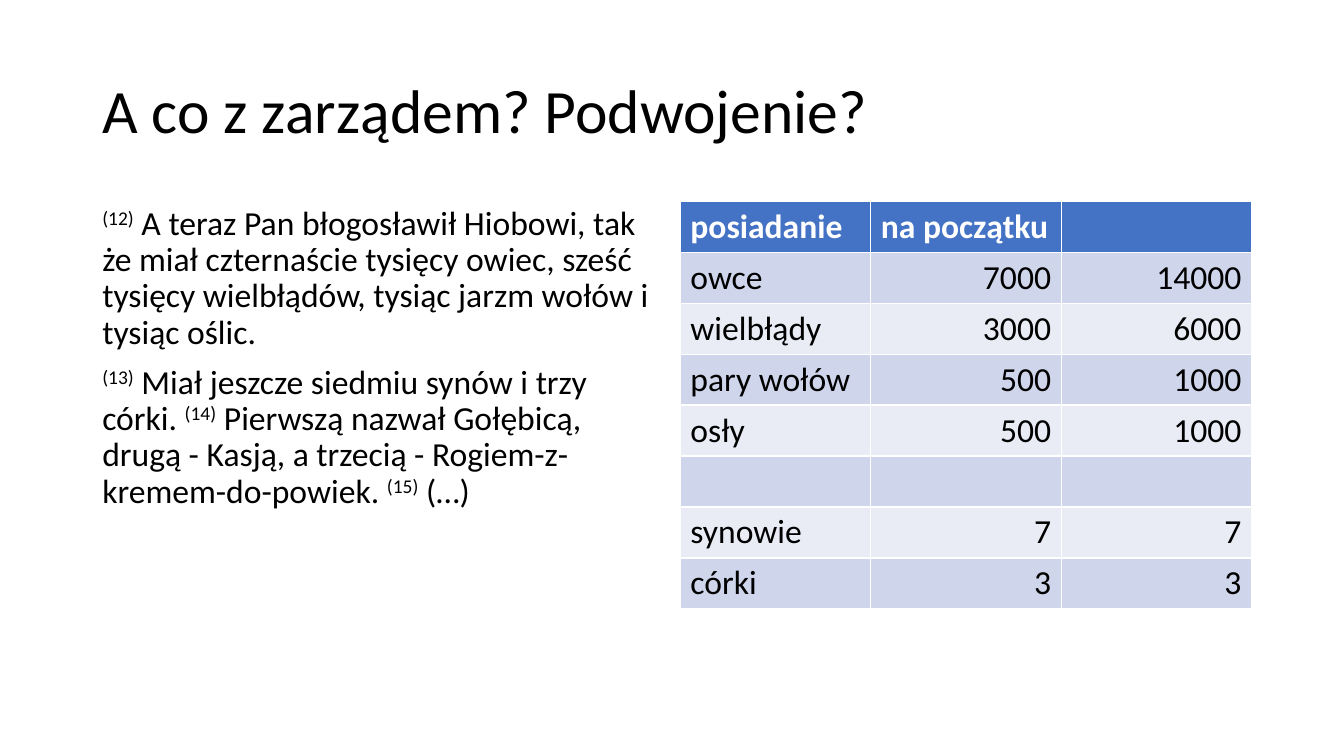
"""Build the slide comparing Job's possessions before and after."""
from pptx import Presentation, util as u
from pptx.dml import color
from pptx.enum import text

FONT = "Calibri"
BLACK, WHITE, HEADER = "000000", "FFFFFF", "4472C4"
BANDS = ("CFD5EA", "E9EBF5")
TITLE = "A co z zarządem? Podwojenie?"
VERSES = [
    [("(12)", " A teraz Pan błogosławił Hiobowi, tak że miał czternaście tysięcy owiec, "
              "sześć tysięcy wielbłądów, tysiąc jarzm wołów i tysiąc oślic.")],
    [("(13)", " Miał jeszcze siedmiu synów i trzy córki. "),
     ("(14)", " Pierwszą nazwał Gołębicą, drugą - Kasją, a trzecią - Rogiem-z-kremem-do-powiek. "),
     ("(15)", " (…)")],
]
POSSESSIONS = [
    ("posiadanie", "na początku", ""),
    ("owce", "7000", "14000"),
    ("wielbłądy", "3000", "6000"),
    ("pary wołów", "500", "1000"),
    ("osły", "500", "1000"),
    ("", "", ""),
    ("synowie", "7", "7"),
    ("córki", "3", "3"),
]
TITLE_BOX = (66, 28.75, 828, 104.4)
BODY_BOX = (66, 143.75, 408, 342.6)
TABLE_LEFT, TABLE_TOP, COLUMN_WIDTH, ROW_HEIGHT = 486, 143.75, 136, 36.4


def rgb(value):
    """Turn a hex string into a colour."""
    return color.RGBColor.from_string(value)


def format_run(run, size, colour=BLACK, bold=False):
    """Apply the slide font to a run."""
    run.font.name = FONT
    run.font.size = u.Pt(size)
    run.font.bold = bold
    run.font.color.rgb = rgb(colour)


def add_text_frame(slide, box):
    """Add a wrapping text box and return its frame."""
    frame = slide.shapes.add_textbox(*(u.Pt(length) for length in box)).text_frame
    frame.word_wrap = True
    return frame


def add_title(slide):
    """Add the vertically centred title."""
    frame = add_text_frame(slide, TITLE_BOX)
    frame.vertical_anchor = text.MSO_ANCHOR.MIDDLE
    frame.text = TITLE
    paragraph = frame.paragraphs[0]
    paragraph.line_spacing = 0.9
    format_run(paragraph.runs[0], 44)


def add_verses(slide):
    """Add the verses with raised verse numbers."""
    frame = add_text_frame(slide, BODY_BOX)
    for index, verses in enumerate(VERSES):
        paragraph = frame.add_paragraph() if index else frame.paragraphs[0]
        paragraph.line_spacing = 0.9
        paragraph.space_before = u.Pt(10)
        for number, words in verses:
            for content, baseline in ((number, "30000"), (words, "0")):
                run = paragraph.add_run()
                run.text = content
                format_run(run, 24)
                run.font._element.set("baseline", baseline)


def add_possessions(slide):
    """Add the banded table of possessions."""
    rows, columns = len(POSSESSIONS), len(POSSESSIONS[0])
    table = slide.shapes.add_table(
        rows, columns, u.Pt(TABLE_LEFT), u.Pt(TABLE_TOP),
        u.Pt(columns * COLUMN_WIDTH), u.Pt(rows * ROW_HEIGHT)).table
    for row, values in enumerate(POSSESSIONS):
        for column, value in enumerate(values):
            cell = table.cell(row, column)
            cell.fill.solid()
            cell.fill.fore_color.rgb = rgb(BANDS[(row - 1) % 2] if row else HEADER)
            if not value:
                continue
            cell.text_frame.text = value
            paragraph = cell.text_frame.paragraphs[0]
            if row and column:
                paragraph.alignment = text.PP_ALIGN.RIGHT
            format_run(paragraph.runs[0], 24, BLACK if row else WHITE, row == 0)


def main():
    """Create and save the presentation."""
    presentation = Presentation()
    presentation.slide_width, presentation.slide_height = u.Pt(960), u.Pt(540)
    slide = presentation.slides.add_slide(presentation.slide_layouts[6])
    add_title(slide)
    add_verses(slide)
    add_possessions(slide)
    presentation.save("out.pptx")


if __name__ == "__main__":
    main()
